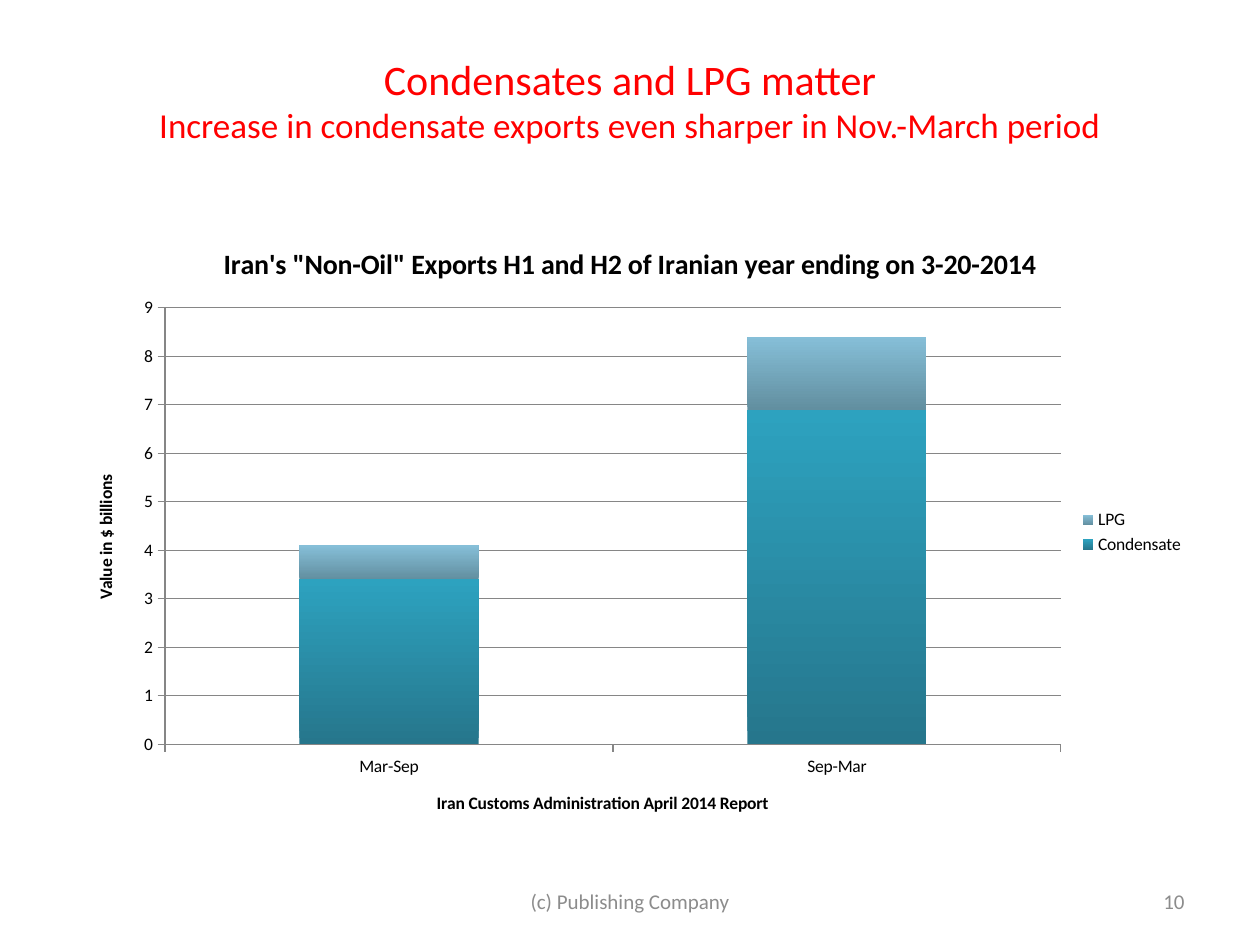
from lxml import etree
from pptx import Presentation
from pptx.chart.data import CategoryChartData
from pptx.dml.color import RGBColor
from pptx.enum.chart import XL_CHART_TYPE, XL_LEGEND_POSITION, XL_TICK_MARK
from pptx.enum.text import MSO_ANCHOR, PP_ALIGN
from pptx.oxml.ns import qn
from pptx.util import Pt

FONT = "Calibri"
COLORS = {
    "title": "FF0000",
    "text": "000000",
    "footer": "8C8C8C",
    "line": "868686",
}
# Gradient of each series, bottom to top
GRADIENTS = {
    "Condensate": ("26768C", "2DA2BF"),
    "LPG": ("628FA0", "86BFD8"),
}


def format_font(font, size, color, bold=False):
    values = {"name": FONT, "size": Pt(size), "bold": bold}
    for name, value in values.items():
        setattr(font, name, value)
    font.color.rgb = RGBColor.from_string(COLORS[color])


def set_title(owner, text, size):
    """Give a chart or an axis a bold title."""
    owner.has_title = True
    title = owner.chart_title if hasattr(owner, "chart_title") else owner.axis_title
    run = title.text_frame.paragraphs[0].add_run()
    run.text = text
    format_font(run.font, size, "text", bold=True)


presentation = Presentation()
presentation.slide_width, presentation.slide_height = Pt(720), Pt(540)
slide = presentation.slides.add_slide(presentation.slide_layouts[5])

# Title
title = slide.shapes.title
title.left, title.top, title.width, title.height = Pt(36), Pt(21.6), Pt(648), Pt(90)
title_frame = title.text_frame
title_frame.vertical_anchor = MSO_ANCHOR.MIDDLE
title_frame.margin_bottom = Pt(23)
paragraph = title_frame.paragraphs[0]
paragraph.alignment = PP_ALIGN.CENTER
title_lines = [
    ("Condensates and LPG matter", 24),
    ("Increase in condensate exports even sharper in Nov.-March period", 20),
]
for index, (text, size) in enumerate(title_lines):
    if index:
        paragraph.add_line_break()
    run = paragraph.add_run()
    run.text = text
    format_font(run.font, size, "title")

# Chart
chart_data = CategoryChartData()
chart_data.categories = ["Mar-Sep", "Sep-Mar"]
chart_data.add_series("Condensate", (3.4, 6.9))
chart_data.add_series("LPG", (0.7, 1.5))
chart = slide.shapes.add_chart(
    XL_CHART_TYPE.COLUMN_STACKED, Pt(36), Pt(126), Pt(648), Pt(356.4), chart_data
).chart
format_font(chart.font, 10, "text")
set_title(chart, 'Iran\'s "Non-Oil" Exports H1 and H2 of Iranian year ending on 3-20-2014', 16)
set_title(chart.category_axis, "Iran Customs Administration April 2014 Report", 10)
set_title(chart.value_axis, "Value in $ billions", 10)

chart.has_legend = True
chart.legend.position = XL_LEGEND_POSITION.RIGHT
chart.legend.include_in_layout = False
format_font(chart.legend.font, 10, "text")

value_axis = chart.value_axis
axis_values = {
    "minimum_scale": 0,
    "maximum_scale": 9,
    "major_unit": 1,
    "has_major_gridlines": True,
}
for name, value in axis_values.items():
    setattr(value_axis, name, value)
value_axis.tick_labels.number_format = "0"
value_axis.tick_labels.number_format_is_linked = False
for axis in (chart.category_axis, value_axis):
    axis.major_tick_mark = XL_TICK_MARK.OUTSIDE
for lined in (chart.category_axis, value_axis, value_axis.major_gridlines):
    lined.format.line.width = Pt(0.75)
    lined.format.line.color.rgb = RGBColor.from_string(COLORS["line"])

plot = chart.plots[0]
plot.gap_width, plot.overlap = 150, 100
plot.vary_by_categories = False
for series in plot.series:
    fill = series.format.fill
    fill.gradient()
    fill.gradient_angle = 90
    for stop, color in zip(fill.gradient_stops, GRADIENTS[series.name]):
        stop.color.rgb = RGBColor.from_string(color)

# Inner plot area, as fractions of the chart
plot_area = chart.element.find(".//" + qn("c:plotArea"))
layout = plot_area.find(qn("c:layout"))
if layout is None:
    layout = etree.Element(qn("c:layout"))
    plot_area.insert(0, layout)
manual_layout = etree.SubElement(layout, qn("c:manualLayout"))
layout_values = {
    "layoutTarget": "inner", "xMode": "edge", "yMode": "edge",
    "x": 0.09, "y": 0.14, "w": 0.79, "h": 0.7,
}
for name, value in layout_values.items():
    etree.SubElement(manual_layout, qn("c:" + name)).set("val", str(value))

# Footer and slide number
footers = [
    ("(c) Publishing Company", 246, 228, PP_ALIGN.CENTER),
    ("10", 516, 168, PP_ALIGN.RIGHT),
]
for text, left, width, alignment in footers:
    text_frame = slide.shapes.add_textbox(Pt(left), Pt(500.5), Pt(width), Pt(28.8)).text_frame
    text_frame.word_wrap = True
    text_frame.vertical_anchor = MSO_ANCHOR.MIDDLE
    paragraph = text_frame.paragraphs[0]
    paragraph.alignment = alignment
    run = paragraph.add_run()
    run.text = text
    format_font(run.font, 12, "footer")

presentation.save("out.pptx")
